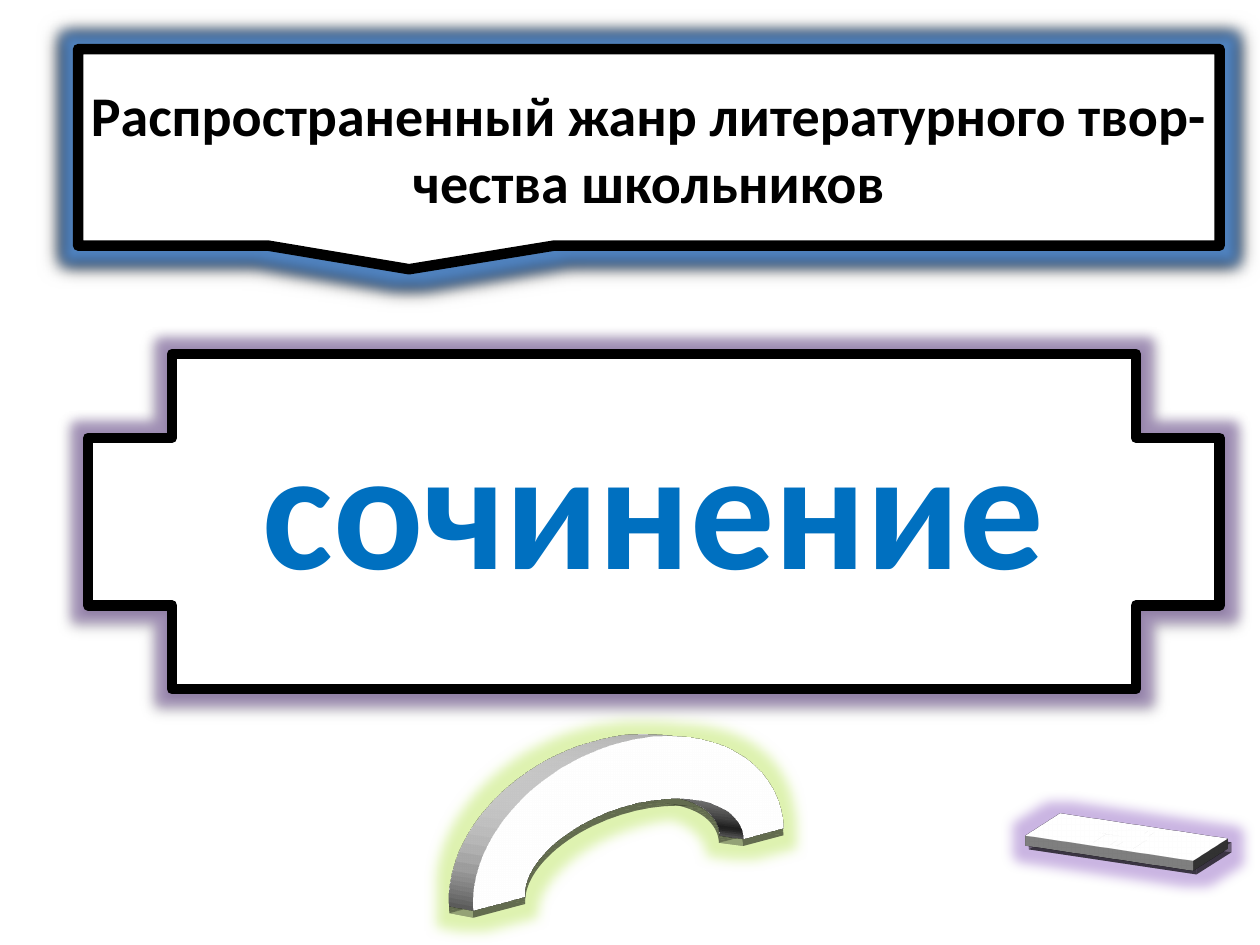
from dataclasses import dataclass

from lxml import etree
from pptx import Presentation
from pptx.dml.color import RGBColor
from pptx.enum.shapes import MSO_SHAPE as SHAPE
from pptx.enum.text import MSO_ANCHOR as ANCHOR, PP_ALIGN as ALIGN
from pptx.oxml import parse_xml
from pptx.oxml.ns import qn
from pptx.util import Inches, Pt

NS = 'xmlns:a="http://schemas.openxmlformats.org/drawingml/2006/main"'


def rgb(value):
    return RGBColor.from_string(value)


@dataclass
class SlideStyle:
    slide: object
    font: str = "Calibri"
    fill: str = "FFFFFF"
    border: str = "000000"

    def shape(self, kind, box, border=0):
        sp = self.slide.shapes.add_shape(kind, *map(Inches, box))
        sp.shadow.inherit = False
        sp.fill.solid()
        sp.fill.fore_color.rgb = rgb(self.fill)
        if border:
            sp.line.color.rgb = rgb(self.border)
            sp.line.width = Pt(border)
            etree.SubElement(sp.line._get_or_add_ln(), qn("a:round"))
        else:
            sp.line.fill.background()
        return sp

    def effects(self, sp, glow, shadow):
        """Glow is (colour, points, opacity %); shadow is (opacity %, blur, distance, angle)."""
        color, radius, strength = glow
        opacity, blur, distance, angle = shadow
        effects = sp._element.spPr.find(qn("a:effectLst"))
        effects.append(parse_xml(
            f'<a:glow {NS} rad="{Pt(radius)}"><a:srgbClr val="{color}">'
            f'<a:alpha val="{strength * 1000}"/></a:srgbClr></a:glow>'))
        effects.append(parse_xml(
            f'<a:outerShdw {NS} blurRad="{Pt(blur)}" dist="{Pt(distance)}" '
            f'dir="{angle * 60000}" rotWithShape="0"><a:srgbClr val="000000">'
            f'<a:alpha val="{opacity * 1000}"/></a:srgbClr></a:outerShdw>'))

    def extrude(self, sp, camera, depth):
        spPr = sp._element.spPr
        spPr.append(parse_xml(
            f'<a:scene3d {NS}><a:camera prst="{camera}"/>'
            '<a:lightRig rig="threePt" dir="t"/></a:scene3d>'))
        spPr.append(parse_xml(f'<a:sp3d {NS} extrusionH="{Pt(depth)}"/>'))

    def text(self, sp, text, size, color, bottom=0.05):
        tf = sp.text_frame
        frame = {"word_wrap": True, "vertical_anchor": ANCHOR.MIDDLE,
                 "margin_bottom": Inches(bottom)}
        for name, value in frame.items():
            setattr(tf, name, value)
        p = tf.paragraphs[0]
        p.alignment = ALIGN.CENTER
        r = p.add_run()
        r.text = text
        for name, value in {"name": self.font, "size": Pt(size), "bold": True}.items():
            setattr(r.font, name, value)
        r.font.color.rgb = rgb(color)


def main():
    prs = Presentation()
    prs.slide_width, prs.slide_height = Inches(10), Inches(7.5)
    s = SlideStyle(prs.slides.add_slide(prs.slide_layouts[6]))

    # Definition callout
    callout = s.shape(SHAPE.RECTANGULAR_CALLOUT, (0.62, 0.39, 9.06, 1.56), border=6)
    callout.adjustments[0], callout.adjustments[1] = -0.21, 0.62
    s.effects(callout, ("4F81BD", 14, 100), (100, 8.5, 1, 90))
    s.text(callout, "Распространенный жанр литературного твор-чества школьников", 32, "000000")

    # Decorative arc
    arc = s.shape(SHAPE.BLOCK_ARC, (3.36, 5.86, 3.44, 2.03))
    s.effects(arc, ("C8EA7C", 14, 60), (33, 17.8, 4, 87))
    s.extrude(arc, "perspectiveContrastingRightFacing", 20)

    # Answer
    answer = s.shape(SHAPE.CROSS, (0.7, 2.81, 8.98, 2.66), border=6)
    s.effects(answer, ("8064A2", 14, 60), (32, 3.5, 2.2, 90))
    s.text(answer, "сочинение", 96, "0070C0", bottom=0.35)

    # Home button
    home = s.shape(SHAPE.ACTION_BUTTON_HOME, (8.2, 6.33, 1.48, 0.63))
    s.effects(home, ("A884D0", 14, 60), (45, 10, 3, 45))
    s.extrude(home, "isometricOffAxis2Top", 6)

    prs.save("out.pptx")


if __name__ == "__main__":
    main()
